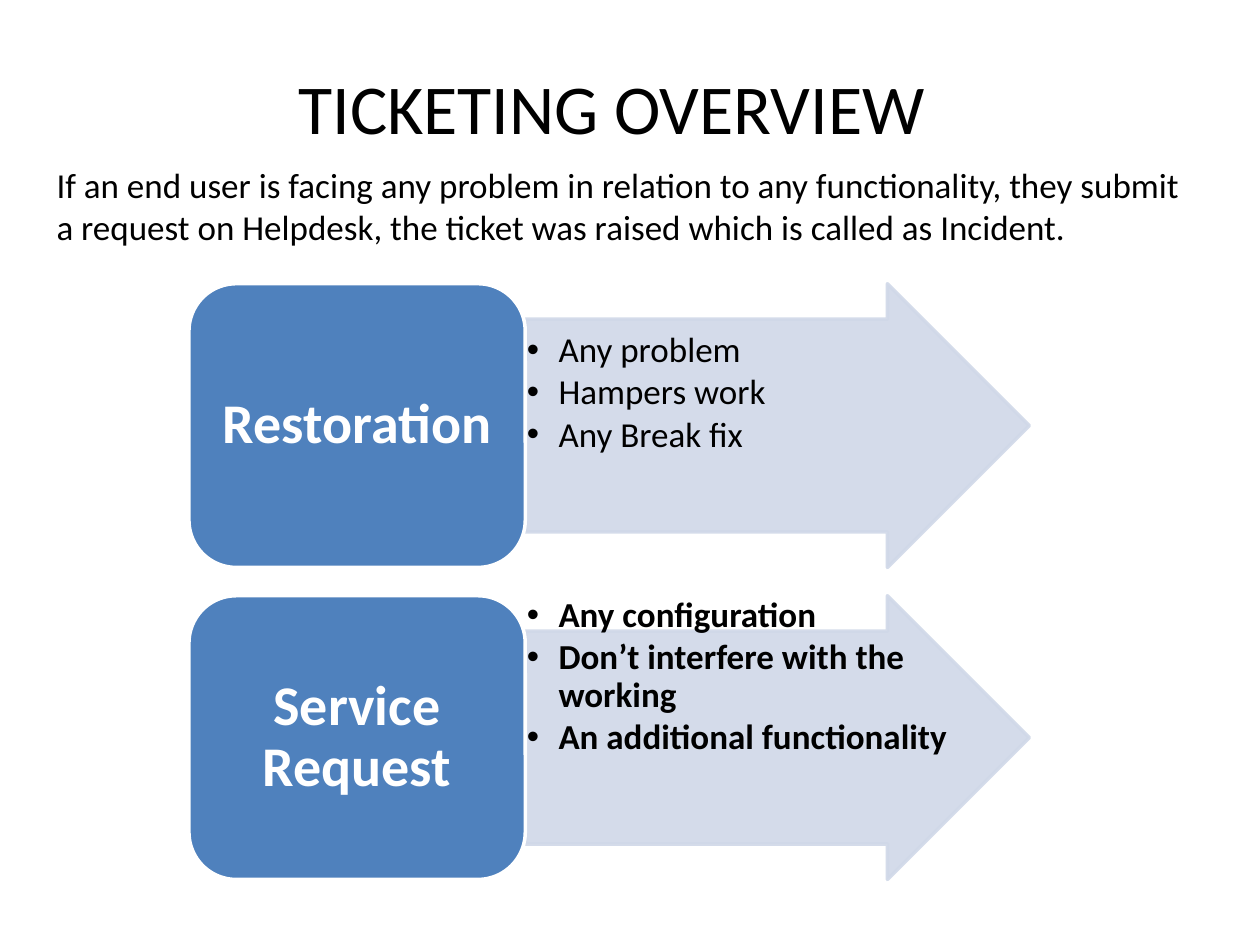
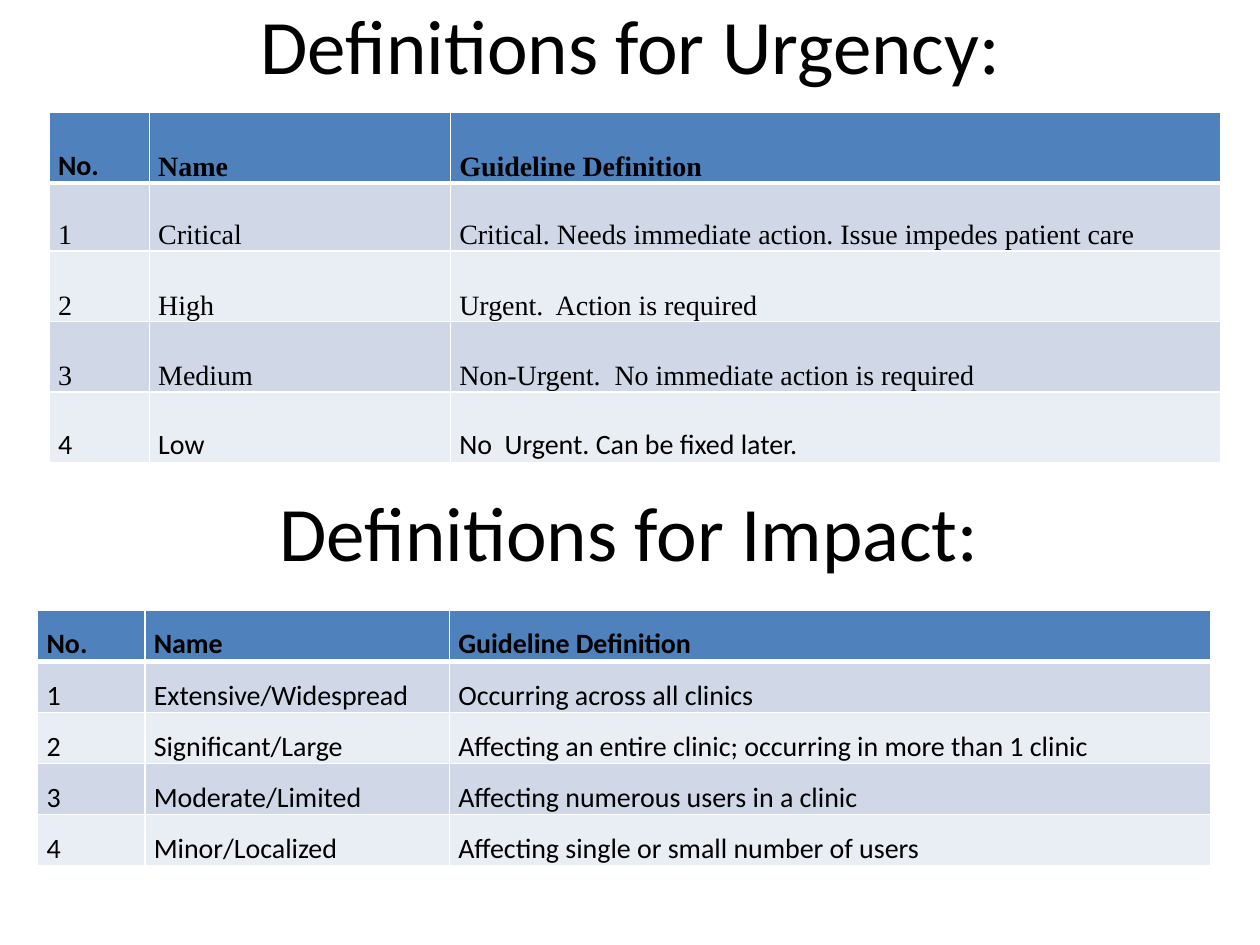
"""Build two slides on ticket types and on urgency and impact levels."""
from lxml import etree
from pptx import Presentation
from pptx.dml.color import RGBColor
from pptx.enum.shapes import MSO_SHAPE
from pptx.enum.text import MSO_ANCHOR, PP_ALIGN
from pptx.oxml.ns import qn
from pptx.util import Cm, Pt

ARROW, ROUND = MSO_SHAPE.RIGHT_ARROW, MSO_SHAPE.ROUNDED_RECTANGLE
TOP, MIDDLE, BOTTOM = MSO_ANCHOR.TOP, MSO_ANCHOR.MIDDLE, MSO_ANCHOR.BOTTOM
LEFT, CENTER = PP_ALIGN.LEFT, PP_ALIGN.CENTER
BLACK = RGBColor(0, 0, 0)
WHITE = RGBColor(255, 255, 255)
BLUE = RGBColor(0x4F, 0x81, 0xBD)
PALE = RGBColor(0xD0, 0xD8, 0xE8)
LIGHT = RGBColor(0xE9, 0xED, 0xF4)
SANS, SERIF = "Calibri", "Times New Roman"


def write(frame, lines, size, color=BLACK, bold=False, align=LEFT, anchor=TOP, font=SANS, space=1.0):
    """Fill a text frame with styled lines."""
    frame.word_wrap = True
    frame.vertical_anchor = anchor
    frame.text = "\n".join(lines)
    for para in frame.paragraphs:
        para.alignment = align
        para.line_spacing = space
        for run in para.runs:
            run.font.name = font
            run.font.size = Pt(size)
            run.font.bold = bold
            run.font.color.rgb = color


def add_text(slide, place, line, size, align=CENTER, anchor=MIDDLE):
    """Add a text box without margins."""
    frame = slide.shapes.add_textbox(*map(Cm, place)).text_frame
    frame.margin_left = frame.margin_right = frame.margin_top = frame.margin_bottom = 0
    write(frame, [line], size, align=align, anchor=anchor)


deck = Presentation()
deck.slide_width, deck.slide_height = Cm(25.4), Cm(19.05)
blank = deck.slide_layouts[6]

types = deck.slides.add_slide(blank)
add_text(types, (1.14, 3.3, 22.76, 14.15),
         "If an end user is facing any problem in relation to any functionality, "
         "they submit a request on Helpdesk, the ticket was raised which is called as Incident.",
         20, LEFT, TOP)
add_text(types, (0.76, 1.3, 23.14, 1.7), "TICKETING OVERVIEW", 40)

tickets = [
    ("Restoration", ["Any problem", "Hampers work", "Any Break fix"], False, 0.98),
    ("Service Request", ["Any configuration", "Don’t interfere with the working",
                         "An additional functionality"], True, 0.03),
]
for row, (name, points, bold, inset) in enumerate(tickets):
    top = Cm(5.72 + row * 6.29)
    arrow = types.shapes.add_shape(ARROW, Cm(10.59), top, Cm(10.16), Cm(5.72))
    arrow.adjustments[0] = 0.75
    arrow.adjustments[1] = 0.5
    label = types.shapes.add_shape(ROUND, Cm(3.81), top, Cm(6.78), Cm(5.72))
    for shape, fill, edge in ((arrow, PALE, PALE), (label, BLUE, WHITE)):
        shape.shadow.inherit = False
        shape.fill.solid()
        shape.fill.fore_color.rgb = fill
        shape.line.color.rgb = edge
        shape.line.width = Pt(2)
    for tint in arrow._element.spPr.iter(qn("a:srgbClr")):
        etree.SubElement(tint, qn("a:alpha"), val="90000")
    label.text_frame.margin_left = label.text_frame.margin_right = Cm(0.2)
    write(label.text_frame, [name], 32, WHITE, True, CENTER, MIDDLE, space=0.9)

    frame = types.shapes.add_textbox(Cm(10.59), top, Cm(9.45), Cm(5.72)).text_frame
    frame.margin_left = frame.margin_right = frame.margin_bottom = Cm(0.03)
    frame.margin_top = Cm(inset)
    write(frame, points, 20, bold=bold, space=0.9)
    for para in frame.paragraphs:
        para.space_after = Pt(2.6)
        props = para._p.get_or_add_pPr()
        props.set("marL", str(Cm(0.64)))
        props.set("indent", str(-Cm(0.64)))
        etree.SubElement(props, qn("a:buFont"), typeface="Arial")
        etree.SubElement(props, qn("a:buChar"), char="•")

levels = deck.slides.add_slide(blank)
add_text(levels, (1.14, 0, 23.14, 1.78), "Definitions for Urgency:", 44)
add_text(levels, (1.12, 9.75, 23.14, 1.9), "Definitions for Impact:", 44)

head = ("No.", "Name", "Guideline Definition")
urgency = [
    head,
    ("1", "Critical", "Critical. Needs immediate action. Issue impedes patient care"),
    ("2", "High", "Urgent.  Action is required"),
    ("3", "Medium", "Non-Urgent.  No immediate action is required"),
    ("4", "Low", "No  Urgent. Can be fixed later."),
]
impact = [
    head,
    ("1", "Extensive/Widespread", "Occurring across all clinics"),
    ("2", "Significant/Large", "Affecting an entire clinic; occurring in more than 1 clinic"),
    ("3", "Moderate/Limited", "Affecting numerous users in a clinic"),
    ("4", "Minor/Localized", "Affecting single or small number of users"),
]
grids = [
    (urgency, 0.99, 2.27, (2.02, 6.07, 15.53), (1.42, 1.37, 1.42, 1.42, 1.42), SERIF),
    (impact, 0.76, 12.3, (2.16, 6.14, 15.35), (1.03,) * 5, SANS),
]
for data, left, top, widths, heights, face in grids:
    table = levels.shapes.add_table(len(data), len(head), Cm(left), Cm(top),
                                    Cm(sum(widths)), Cm(sum(heights))).table
    for col, width in zip(table.columns, widths):
        col.width = Cm(width)
    for row, height in zip(table.rows, heights):
        row.height = Cm(height)
    for r, line in enumerate(data):
        for c, text in enumerate(line):
            cell = table.cell(r, c)
            cell.margin_left = cell.margin_right = Cm(0.18)
            cell.margin_top = cell.margin_bottom = 0
            cell.vertical_anchor = BOTTOM
            font = SANS if r == 4 or (r, c) == (0, 0) else face
            write(cell.text_frame, [text], 16, bold=r == 0, font=font, space=1.5)
            props = cell._tc.get_or_add_tcPr()
            for side in ("lnL", "lnR", "lnT", "lnB"):
                thick = (r, side) in ((0, "lnB"), (1, "lnT"))
                edge = etree.SubElement(props, qn("a:" + side), w=str(Pt(3 if thick else 1)))
                solid = etree.SubElement(edge, qn("a:solidFill"))
                etree.SubElement(solid, qn("a:srgbClr"), val=str(WHITE))
            cell.fill.solid()
            cell.fill.fore_color.rgb = BLUE if r == 0 else PALE if r % 2 else LIGHT

deck.save("out.pptx")
